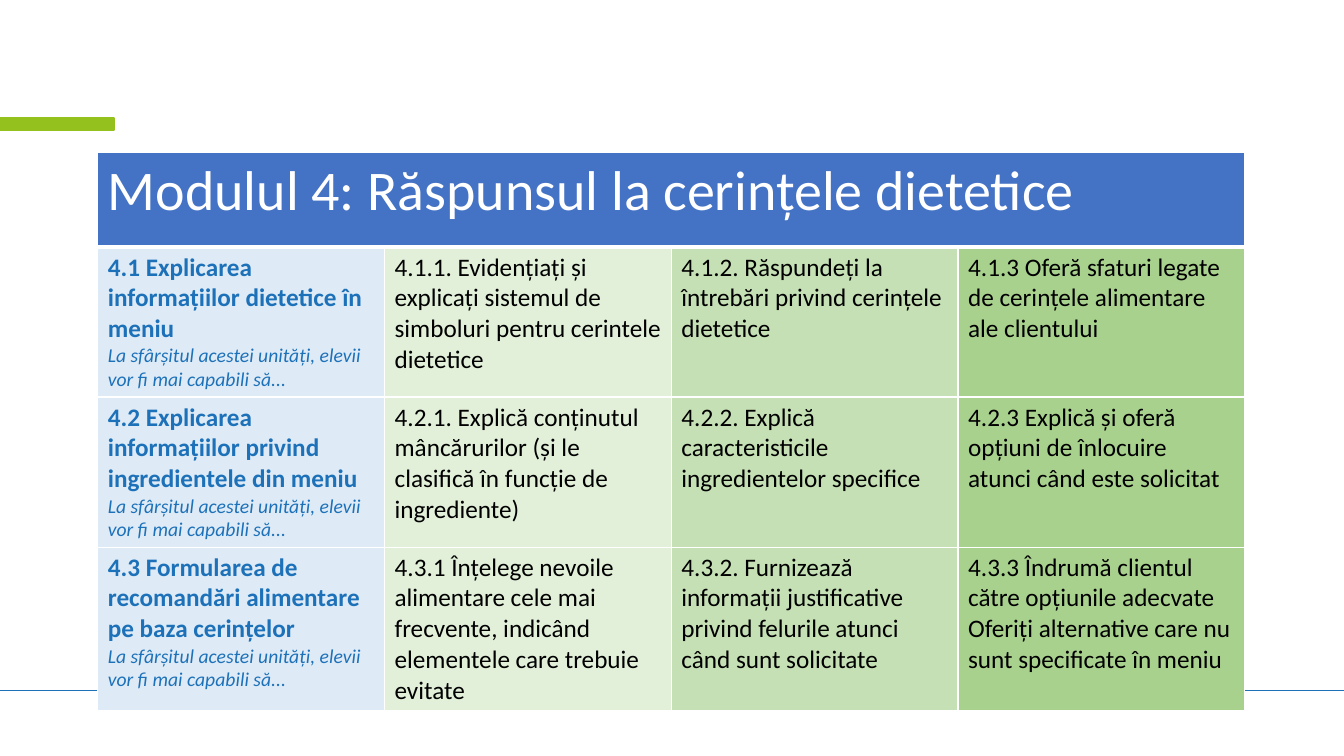
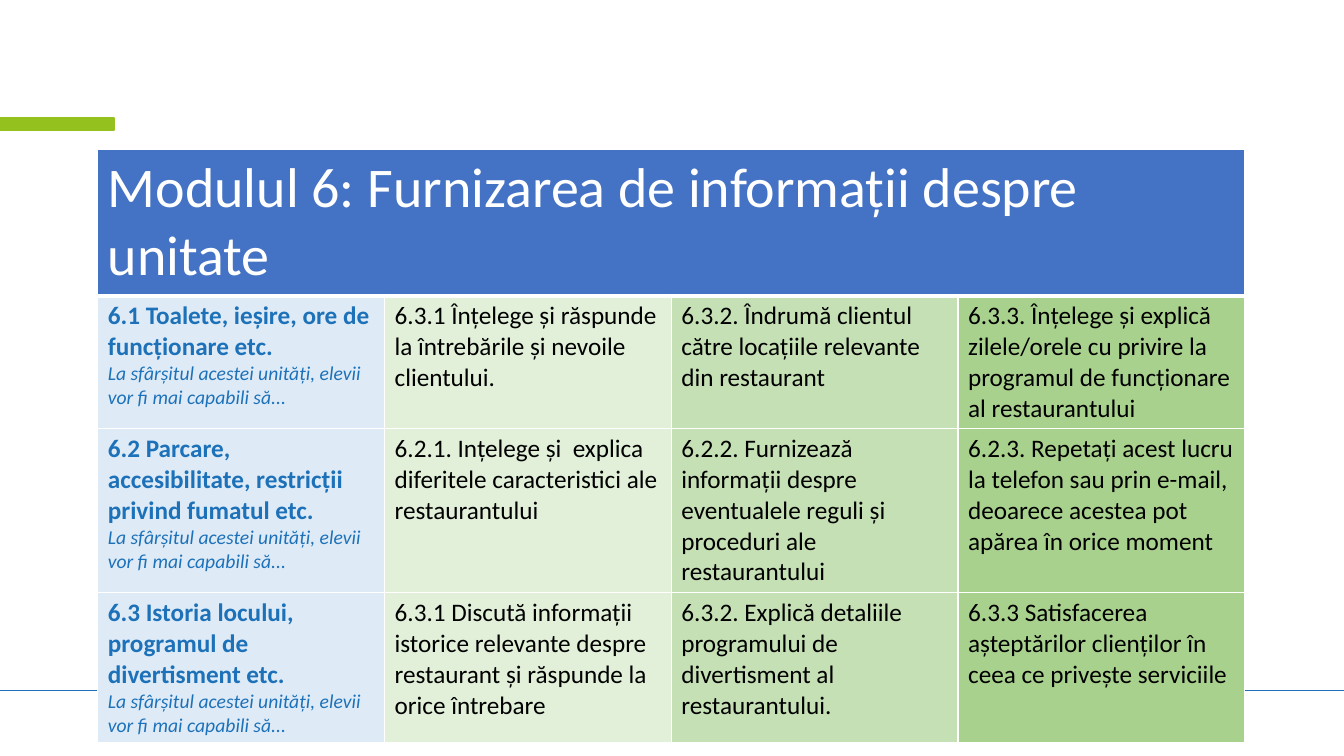
"""Build two module slides, each a table of units and learning outcomes."""
from dataclasses import dataclass

from lxml import etree
from pptx import Presentation
from pptx.dml.color import RGBColor
from pptx.enum import shapes
from pptx.oxml import ns
from pptx.util import Pt


@dataclass(frozen=True)
class Theme:
    """Colours, type and measures in points."""
    font: str = "Calibri"
    white: str = "FFFFFF"
    black: str = "000000"
    blue: str = "1D71B8"
    green: str = "95C11F"
    header: str = "4472C4"
    columns: tuple = ("DEEBF7", "E2F0D9", "C5E0B4", "A9D18E")
    title_size: float = 40
    body_size: float = 18
    note_size: float = 14
    slide_width: float = 960
    slide_height: float = 540
    table_left: float = 69.84
    column_width: float = 204.84
    header_height: float = 67.7
    unit_height: float = 83.5
    rule_top: float = 493.2
    edge: float = 1
    header_edge: float = 3


THEME = Theme()
OUTCOME_LEAD = "La sfârșitul acestei unități, elevii vor fi mai capabili să..."

MODULES = [
    ("Modulul 4: Răspunsul la cerințele dietetice", 108.72, [
        ("4.1 Explicarea informațiilor dietetice în meniu",
         "4.1.1. Evidențiați și explicați sistemul de simboluri pentru cerintele dietetice",
         "4.1.2. Răspundeți la întrebări privind cerințele dietetice",
         "4.1.3 Oferă sfaturi legate de cerințele alimentare ale clientului"),
        ("4.2 Explicarea informațiilor privind ingredientele din meniu",
         "4.2.1. Explică conținutul mâncărurilor (și le clasifică în funcție de ingrediente)",
         "4.2.2. Explică caracteristicile ingredientelor specifice",
         "4.2.3 Explică și oferă opțiuni de înlocuire atunci când este solicitat"),
        ("4.3 Formularea de recomandări alimentare pe baza cerințelor",
         "4.3.1 Înțelege nevoile alimentare cele mai frecvente, indicând elementele care "
         "trebuie evitate",
         "4.3.2. Furnizează informații justificative privind felurile atunci când sunt solicitate",
         "4.3.3 Îndrumă clientul către opțiunile adecvate\n"
         "Oferiți alternative care nu sunt specificate în meniu"),
    ]),
    ("Modulul 6: Furnizarea de informații despre unitate", 106.56, [
        ("6.1 Toalete, ieșire, ore de funcționare etc.",
         "6.3.1 Înțelege și răspunde la întrebările și nevoile clientului.",
         "6.3.2. Îndrumă clientul către locațiile relevante din restaurant",
         "6.3.3. Înțelege și explică zilele/orele cu privire la programul de funcționare "
         "al restaurantului"),
        ("6.2 Parcare, accesibilitate, restricții privind fumatul etc.",
         "6.2.1. Ințelege și  explica diferitele caracteristici ale restaurantului",
         "6.2.2. Furnizează informații despre eventualele reguli și proceduri ale restaurantului",
         "6.2.3. Repetați acest lucru la telefon sau prin e-mail, deoarece acestea pot "
         "apărea în orice moment"),
        ("6.3 Istoria locului, programul de divertisment etc.",
         "6.3.1 Discută informații istorice relevante despre restaurant și răspunde la "
         "orice întrebare",
         "6.3.2. Explică detaliile programului de divertisment al restaurantului.",
         "6.3.3 Satisfacerea așteptărilor clienților în ceea ce privește serviciile"),
    ]),
]


def rgb(value):
    """Turn a hex string into a colour."""
    return RGBColor.from_string(value)


def write(paragraph, content, *, size=THEME.body_size, color=THEME.black,
          bold=False, italic=False):
    """Write one formatted run into a paragraph."""
    run = paragraph.add_run()
    run.text = content
    font = run.font
    font.name, font.size = THEME.font, Pt(size)
    font.bold, font.italic = bold, italic
    font.color.rgb = rgb(color)


def fill_cell(cell, color, bottom=THEME.edge):
    """Give a cell its fill and white edges."""
    cell.fill.solid()
    cell.fill.fore_color.rgb = rgb(color)
    properties = cell._tc.get_or_add_tcPr()
    widths = {"lnL": THEME.edge, "lnR": THEME.edge, "lnT": THEME.edge, "lnB": bottom}
    for position, (side, width) in enumerate(widths.items()):
        edge = etree.Element(ns.qn(f"a:{side}"), w=str(Pt(width)))
        paint = etree.SubElement(edge, ns.qn("a:solidFill"))
        etree.SubElement(paint, ns.qn("a:srgbClr"), val=THEME.white)
        properties.insert(position, edge)


def add_frame(slide):
    """Draw the bottom rule and the accent bar shared by the slides."""
    rule = slide.shapes.add_connector(
        shapes.MSO_CONNECTOR.STRAIGHT, 0, Pt(THEME.rule_top),
        Pt(THEME.slide_width), Pt(THEME.rule_top))
    rule.line.color.rgb = rgb(THEME.blue)
    rule.line.width = Pt(THEME.edge)
    etree.SubElement(rule._element.spPr, ns.qn("a:effectLst"))
    accent = slide.shapes.add_shape(
        shapes.MSO_SHAPE.RECTANGLE, 0, Pt(84.2), Pt(81.4), Pt(8.8))
    accent.shadow.inherit = False
    accent.fill.solid()
    accent.fill.fore_color.rgb = rgb(THEME.green)
    accent.line.color.rgb = rgb(THEME.green)
    accent.line.width = Pt(THEME.edge)


def add_header(table, title):
    """Merge the first row and write the module title."""
    cells = list(table.rows[0].cells)
    cells[0].merge(cells[-1])
    for cell in cells:
        fill_cell(cell, THEME.header, THEME.header_edge)
    write(cells[0].text_frame.paragraphs[0], title,
          size=THEME.title_size, color=THEME.white)


def add_unit(row, unit, outcomes):
    """Write a unit name with its lead-in, followed by its outcomes."""
    for cell, color in zip(row.cells, THEME.columns):
        fill_cell(cell, color)
    unit_cell, *outcome_cells = row.cells
    frame = unit_cell.text_frame
    write(frame.paragraphs[0], unit, color=THEME.blue, bold=True)
    write(frame.add_paragraph(), OUTCOME_LEAD, size=THEME.note_size,
          color=THEME.blue, italic=True)
    for cell, outcome in zip(outcome_cells, outcomes):
        first, *others = outcome.split("\n")
        write(cell.text_frame.paragraphs[0], first)
        for line in others:
            write(cell.text_frame.add_paragraph(), line)


def add_module(slide, title, top, units):
    """Add the table of one module."""
    count = len(THEME.columns)
    height = THEME.header_height + THEME.unit_height * len(units)
    table = slide.shapes.add_table(
        len(units) + 1, count, Pt(THEME.table_left), Pt(top),
        Pt(THEME.column_width * count), Pt(height)).table
    table.first_row = table.horz_banding = False
    for column in table.columns:
        column.width = Pt(THEME.column_width)
    header, *unit_rows = table.rows
    header.height = Pt(THEME.header_height)
    add_header(table, title)
    for row, (unit, *outcomes) in zip(unit_rows, units):
        row.height = Pt(THEME.unit_height)
        add_unit(row, unit, outcomes)


def main():
    """Build and save the presentation."""
    deck = Presentation()
    deck.slide_width, deck.slide_height = Pt(THEME.slide_width), Pt(THEME.slide_height)
    for title, top, units in MODULES:
        slide = deck.slides.add_slide(deck.slide_layouts[6])
        add_frame(slide)
        add_module(slide, title, top, units)
    deck.save("out.pptx")


if __name__ == "__main__":
    main()
